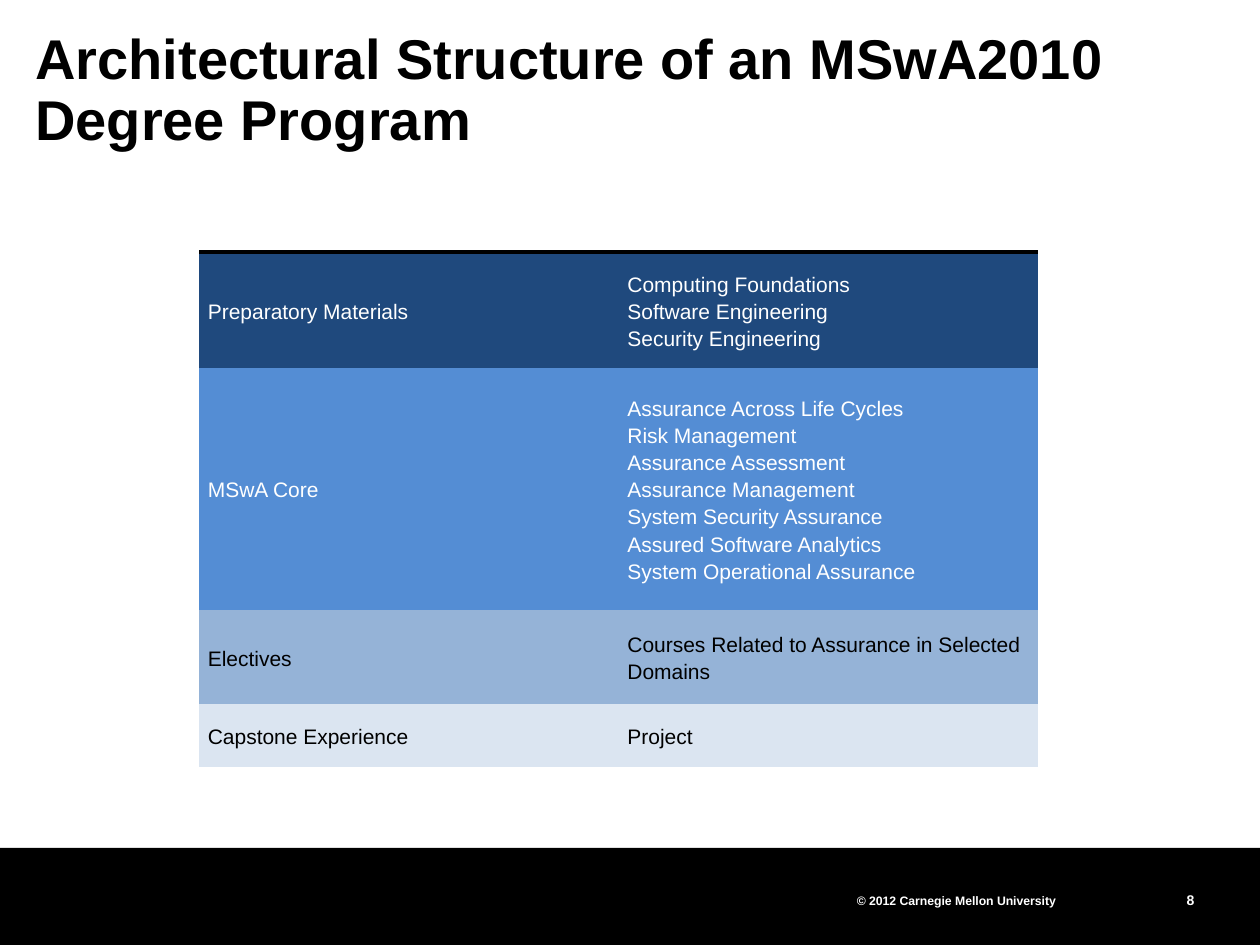
from lxml import etree
from pptx import Presentation
from pptx.dml.color import RGBColor
from pptx.enum.shapes import MSO_SHAPE
from pptx.enum.text import MSO_ANCHOR, PP_ALIGN
from pptx.oxml.ns import qn
from pptx.util import Inches, Pt

RECTANGLE = MSO_SHAPE.RECTANGLE
TOP, MIDDLE = MSO_ANCHOR.TOP, MSO_ANCHOR.MIDDLE
LEFT, RIGHT = PP_ALIGN.LEFT, PP_ALIGN.RIGHT
NO_TABLE_STYLE = "{2D5ABB26-0587-4C30-8999-92F81FD0307C}"

WIDTH, HEIGHT = 10, 7.5
FOOTER_TOP = 6.73
BLACK, WHITE = "000000", "FFFFFF"

# text, (left, top, width, height), inset, anchor, paragraph format, size, colour
LABELS = [
    ("Architectural Structure of an MSwA2010 Degree Program",
     (0.28, 0.25, 9.55, 0.78), 0, TOP,
     {"alignment": LEFT, "line_spacing": 0.9}, 32, BLACK),
    ("8", (8.56, 7.03, 0.92, 0.18), 0, MIDDLE,
     {"alignment": RIGHT, "line_spacing": Pt(13)}, 8, WHITE),
    ("© 2012 Carnegie Mellon University",
     (6.75, 6.99, 2.5, 0.26), 0.05, MIDDLE,
     {"alignment": LEFT, "line_spacing": 1.5}, 7, WHITE),
]

# component, courses, row height, fill, text colour
PROGRAM = [
    ("Preparatory Materials",
     ["Computing Foundations", "Software Engineering", "Security Engineering"],
     0.92, "1F497D", WHITE),
    ("MSwA Core",
     ["Assurance Across Life Cycles", "Risk Management", "Assurance Assessment",
      "Assurance Management", "System Security Assurance",
      "Assured Software Analytics", "System Operational Assurance"],
     1.92, "548DD4", WHITE),
    ("Electives", ["Courses Related to Assurance in Selected Domains"],
     0.75, "95B3D7", BLACK),
    ("Capstone Experience", ["Project"], 0.5, "DBE5F1", BLACK),
]
TABLE_LEFT, TABLE_TOP, COLUMN_WIDTH = 1.58, 2, 3.33


def paint(fill, colour):
    fill.solid()
    fill.fore_color.rgb = RGBColor.from_string(colour)


def write(frame, lines, paragraph_format, size, colour, bold=False):
    frame.word_wrap = True
    for index, line in enumerate(lines):
        paragraph = frame.add_paragraph() if index else frame.paragraphs[0]
        for name, value in paragraph_format.items():
            setattr(paragraph, name, value)
        run = paragraph.add_run()
        run.text = line
        for name, value in {"name": "Arial", "size": Pt(size), "bold": bold}.items():
            setattr(run.font, name, value)
        paint(run.font.fill, colour)


def set_margins(owner, horizontal, vertical):
    owner.margin_left = owner.margin_right = Inches(horizontal)
    owner.margin_top = owner.margin_bottom = Inches(vertical)


def add_top_border(cell, colour, points):
    """Put the border ahead of the cell's fill, as the schema requires."""
    border = etree.Element(qn("a:lnT"), w=str(Pt(points)))
    solid = etree.SubElement(border, qn("a:solidFill"))
    etree.SubElement(solid, qn("a:srgbClr"), val=colour)
    cell._tc.get_or_add_tcPr().insert(0, border)


def add_program_table(slide):
    table = slide.shapes.add_table(
        len(PROGRAM), 2, Inches(TABLE_LEFT), Inches(TABLE_TOP),
        Inches(2 * COLUMN_WIDTH), Inches(sum(row[2] for row in PROGRAM))).table
    table.first_row = table.horz_banding = False
    table._tbl.tblPr.find(qn("a:tableStyleId")).text = NO_TABLE_STYLE
    for column in table.columns:
        column.width = Inches(COLUMN_WIDTH)
    for row, (component, courses, height, fill, colour) in enumerate(PROGRAM):
        table.rows[row].height = Inches(height)
        for column, lines in enumerate(([component], courses)):
            cell = table.cell(row, column)
            cell.vertical_anchor = MIDDLE
            set_margins(cell, 0.07, 0.05)
            paint(cell.fill, fill)
            write(cell.text_frame, lines,
                  {"alignment": LEFT, "line_spacing": 1.15}, 12, colour)
            if row == 0:
                add_top_border(cell, BLACK, 2.25)


def main():
    deck = Presentation()
    deck.slide_width, deck.slide_height = Inches(WIDTH), Inches(HEIGHT)
    slide = deck.slides.add_slide(deck.slide_layouts[6])
    paint(slide.background.fill, WHITE)

    footer = slide.shapes.add_shape(
        RECTANGLE, 0, Inches(FOOTER_TOP), Inches(WIDTH), Inches(HEIGHT - FOOTER_TOP))
    footer.shadow.inherit = False
    paint(footer.fill, BLACK)
    footer.line.fill.background()

    for text, place, inset, anchor, paragraph_format, size, colour in LABELS:
        frame = slide.shapes.add_textbox(*map(Inches, place)).text_frame
        set_margins(frame, inset, inset)
        frame.vertical_anchor = anchor
        write(frame, [text], paragraph_format, size, colour, bold=True)

    add_program_table(slide)
    deck.save("out.pptx")


if __name__ == "__main__":
    main()
